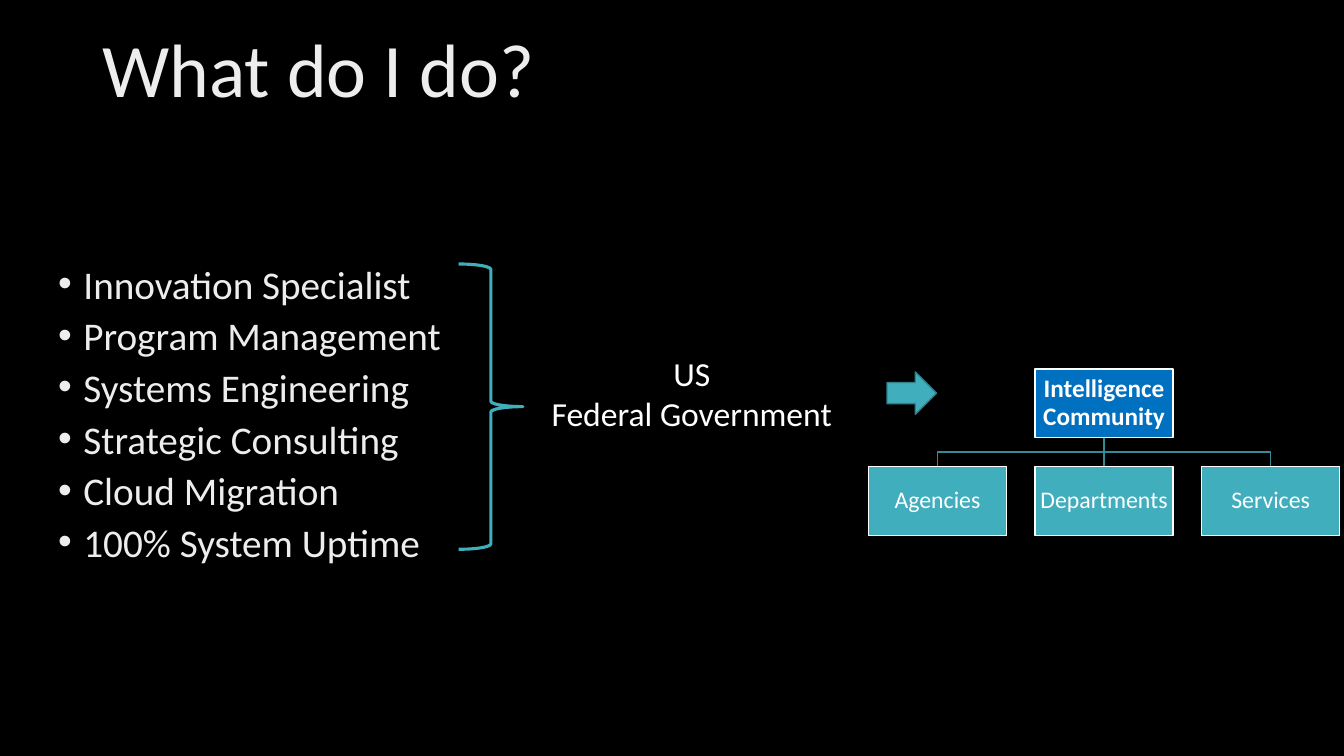
from dataclasses import dataclass

from lxml import etree
from pptx import Presentation
from pptx.dml.color import RGBColor
from pptx.enum.shapes import MSO_CONNECTOR, MSO_SHAPE
from pptx.enum.text import MSO_ANCHOR, MSO_AUTO_SIZE, PP_ALIGN
from pptx.oxml.ns import qn
from pptx.util import Pt

LEFT, CENTER = PP_ALIGN.LEFT, PP_ALIGN.CENTER
TOP, MIDDLE = MSO_ANCHOR.TOP, MSO_ANCHOR.MIDDLE
NO_AUTOFIT = MSO_AUTO_SIZE.NONE
STRAIGHT = MSO_CONNECTOR.STRAIGHT
BRACE, ARROW, BOX = MSO_SHAPE.RIGHT_BRACE, MSO_SHAPE.RIGHT_ARROW, MSO_SHAPE.RECTANGLE


@dataclass(frozen=True)
class Theme:
    font: str = "Calibri"
    background: str = "000000"
    soft_text: str = "EDEDED"
    text: str = "FFFFFF"
    accent: str = "41AEBD"
    arrow_edge: str = "30818C"
    branch: str = "348B97"
    highlight: str = "0070C0"
    title_size: float = 54
    list_size: float = 28
    client_size: float = 24
    root_size: float = 18
    unit_size: float = 17


class SlideBuilder:
    def __init__(self, slide, theme):
        self.slide = slide
        self.shapes = slide.shapes
        self.theme = theme
        fill = slide.background.fill
        fill.solid()
        fill.fore_color.rgb = RGBColor.from_string(theme.background)

    def set_lines(self, frame, lines, size, color, align=LEFT, anchor=TOP,
                  spacing=1.0, before=0, bold=False, bullet=False):
        frame.auto_size = NO_AUTOFIT
        frame.vertical_anchor = anchor
        for index, line in enumerate(lines):
            paragraph = frame.paragraphs[0] if index == 0 else frame.add_paragraph()
            paragraph.text = line
            paragraph.alignment = align
            paragraph.line_spacing = spacing
            paragraph.space_before = Pt(before if index else 0)
            if bullet:
                self.add_bullet(paragraph)
            font = paragraph.font
            font.name, font.size, font.bold = self.theme.font, Pt(size), bold
            font.color.rgb = RGBColor.from_string(color)

    def add_bullet(self, paragraph):
        properties = paragraph._p.get_or_add_pPr()
        properties.set("marL", str(Pt(18)))
        properties.set("indent", str(-Pt(18)))
        etree.SubElement(properties, qn("a:buFont")).set("typeface", "Arial")
        etree.SubElement(properties, qn("a:buChar")).set("char", "•")

    def title(self, text, left, top, width, height):
        title = self.shapes.title
        title.left, title.top = Pt(left), Pt(top)
        title.width, title.height = Pt(width), Pt(height)
        self.set_lines(title.text_frame, [text], self.theme.title_size,
                       self.theme.soft_text, anchor=MIDDLE, spacing=0.9)

    def text(self, lines, left, top, width, height, size, color, wrap=True, **style):
        box = self.shapes.add_textbox(Pt(left), Pt(top), Pt(width), Pt(height))
        box.text_frame.word_wrap = wrap
        self.set_lines(box.text_frame, lines, size, color, **style)

    def style_line(self, line, color, weight):
        line.color.rgb = RGBColor.from_string(color)
        line.width = Pt(weight)

    def shape(self, kind, left, top, width, height, edge, weight=1, fill=None):
        shape = self.shapes.add_shape(kind, Pt(left), Pt(top), Pt(width), Pt(height))
        shape.shadow.inherit = False
        if fill:
            shape.fill.solid()
            shape.fill.fore_color.rgb = RGBColor.from_string(fill)
        else:
            shape.fill.background()
        self.style_line(shape.line, edge, weight)
        return shape

    def org_box(self, label, left, top, width, height, size, fill, bold=False):
        box = self.shape(BOX, left, top, width, height, self.theme.text, fill=fill)
        frame = box.text_frame
        frame.word_wrap = True
        frame.margin_left = frame.margin_right = Pt(0.75)
        frame.margin_top = frame.margin_bottom = Pt(0.75)
        self.set_lines(frame, [label], size, self.theme.text, align=CENTER,
                       anchor=MIDDLE, spacing=0.9, bold=bold)

    def branch(self, start_x, start_y, end_x, end_y):
        """Join a parent to a child, bending halfway down when they are not aligned."""
        if start_x == end_x:
            link = self.shapes.add_connector(
                STRAIGHT, Pt(start_x), Pt(start_y), Pt(end_x), Pt(end_y))
            etree.SubElement(link._element.spPr, qn("a:effectLst"))
        else:
            bend_y = (start_y + end_y) / 2
            outline = self.shapes.build_freeform(Pt(start_x), Pt(start_y))
            outline.add_line_segments(
                [(Pt(start_x), Pt(bend_y)), (Pt(end_x), Pt(bend_y)), (Pt(end_x), Pt(end_y))],
                close=False)
            link = outline.convert_to_shape()
            link.shadow.inherit = False
            link.fill.background()
        self.style_line(link.line, self.theme.branch, 1)

    def org_chart(self, root, units, left, top, width, height, pitch, drop):
        """Place the root above the middle of an evenly spaced row of units."""
        theme = self.theme
        root_left = left + pitch * (len(units) - 1) / 2
        units_top = top + height + drop
        lefts = [left + pitch * index for index in range(len(units))]
        for unit_left in lefts:
            self.branch(root_left + width / 2, top + height,
                        unit_left + width / 2, units_top)
        self.org_box(root, root_left, top, width, height,
                     theme.root_size, theme.highlight, bold=True)
        for unit, unit_left in zip(units, lefts):
            self.org_box(unit, unit_left, units_top, width, height,
                         theme.unit_size, theme.accent)


def main():
    theme = Theme()
    presentation = Presentation()
    presentation.slide_width, presentation.slide_height = Pt(960), Pt(540)
    slide = presentation.slides.add_slide(presentation.slide_layouts[5])
    builder = SlideBuilder(slide, theme)

    builder.title("What do I do?", 66, 0, 828, 104.4)
    skills = ["Innovation Specialist", "Program Management", "Systems Engineering",
              "Strategic Consulting", "Cloud Migration", "100% System Uptime"]
    builder.text(skills, 34.5, 188.6, 805.7, 224.6, theme.list_size, theme.soft_text,
                 spacing=0.8, before=10, bullet=True)
    builder.shape(BRACE, 327.6, 188.6, 46, 203.8, theme.accent, weight=2.25)
    builder.text(["US", "Federal Government"], 384, 248.4, 220.3, 65.5,
                 theme.client_size, theme.text, wrap=False, align=CENTER)
    builder.shape(ARROW, 633.6, 265.7, 35.3, 30.2, theme.arrow_edge, fill=theme.accent)
    builder.org_chart("Intelligence Community", ["Agencies", "Departments", "Services"],
                      left=620.4, top=263.5, width=98.6, height=49.2, pitch=119, drop=20.7)

    presentation.save("out.pptx")


if __name__ == "__main__":
    main()
